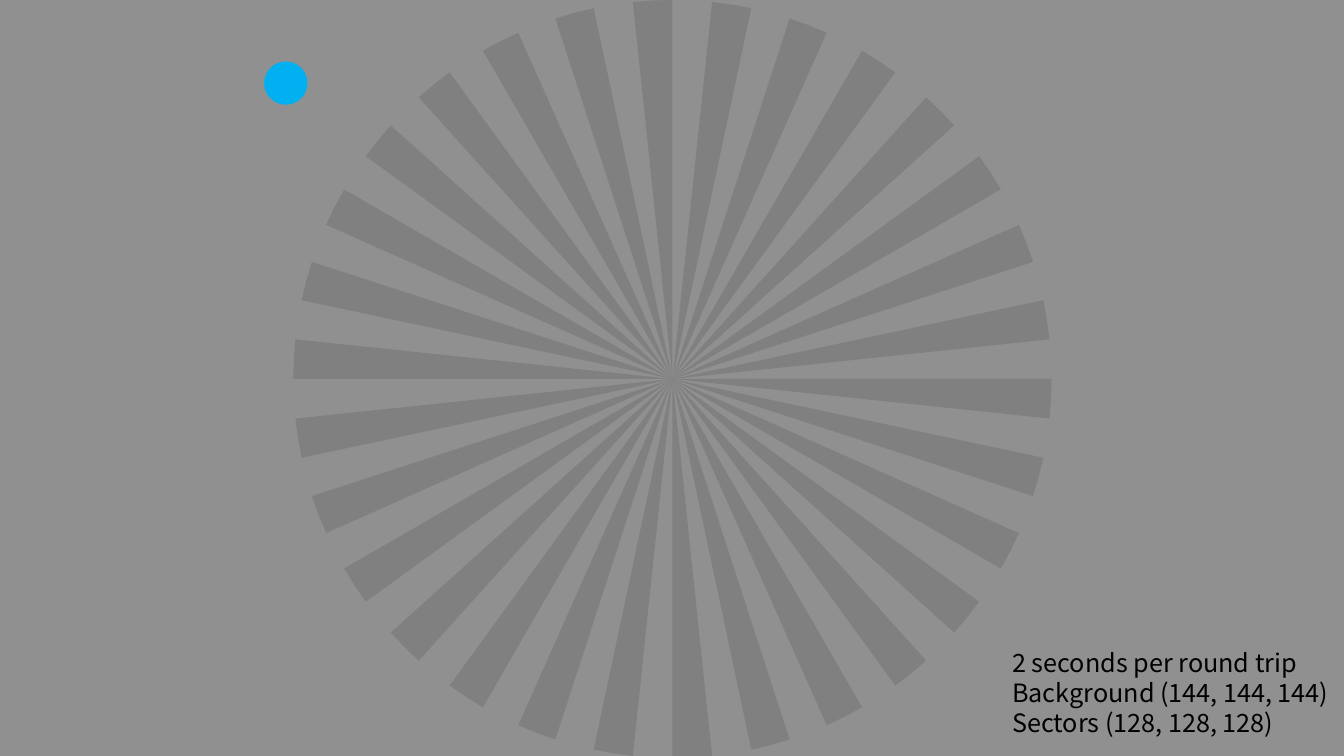
from math import cos, radians, sin

from pptx import Presentation
from pptx.dml.color import RGBColor
from pptx.enum.shapes import MSO_SHAPE
from pptx.enum.text import MSO_AUTO_SIZE
from pptx.util import Inches, Pt

COLORS = {"background": "909090", "sector": "808080", "dot": "00B0F0", "text": "000000"}
FONT = "Noto Sans CJK JP"
CENTER_X, CENTER_Y, RADIUS = 6.67, 3.76, 3.76
SECTORS = 30
STEP = 360 / SECTORS
NOTES = ["2 seconds per round trip", "Background (144, 144, 144)", "Sectors (128, 128, 128)"]


def paint(sp, color):
    sp.shadow.inherit = False
    sp.fill.solid()
    sp.fill.fore_color.rgb = RGBColor.from_string(COLORS[color])
    sp.line.fill.background()


def rim_point(degrees):
    angle = radians(degrees)
    return Inches(CENTER_X + RADIUS * cos(angle)), Inches(CENTER_Y + RADIUS * sin(angle))


prs = Presentation()
prs.slide_width, prs.slide_height = Inches(13.33), Inches(7.5)
s = prs.slides.add_slide(prs.slide_layouts[6])
s.background.fill.solid()
s.background.fill.fore_color.rgb = RGBColor.from_string(COLORS["background"])

# Wheel: each sector fills the first half of its step, counterclockwise from the right
wheel = s.shapes.add_group_shape()
for i in range(SECTORS):
    start = -i * STEP
    fb = wheel.shapes.build_freeform(Inches(CENTER_X), Inches(CENTER_Y))
    fb.add_line_segments([rim_point(start + STEP * part) for part in (0, 0.25, 0.5)])
    paint(fb.convert_to_shape(), "sector")

# Notes in the lower right corner
tb = s.shapes.add_textbox(Inches(9.94), Inches(6.37), Inches(3.39), Inches(1.01))
tf = tb.text_frame
tf.word_wrap = False
tf.auto_size = MSO_AUTO_SIZE.SHAPE_TO_FIT_TEXT
for i, note in enumerate(NOTES):
    p = tf.add_paragraph() if i else tf.paragraphs[0]
    p.text = note
    font = p.runs[0].font
    font.name, font.size = FONT, Pt(18)
    font.color.rgb = RGBColor.from_string(COLORS["text"])

# Moving dot
dot = s.shapes.add_shape(MSO_SHAPE.OVAL, Inches(2.62), Inches(0.61), Inches(0.43), Inches(0.43))
paint(dot, "dot")

prs.save("out.pptx")
